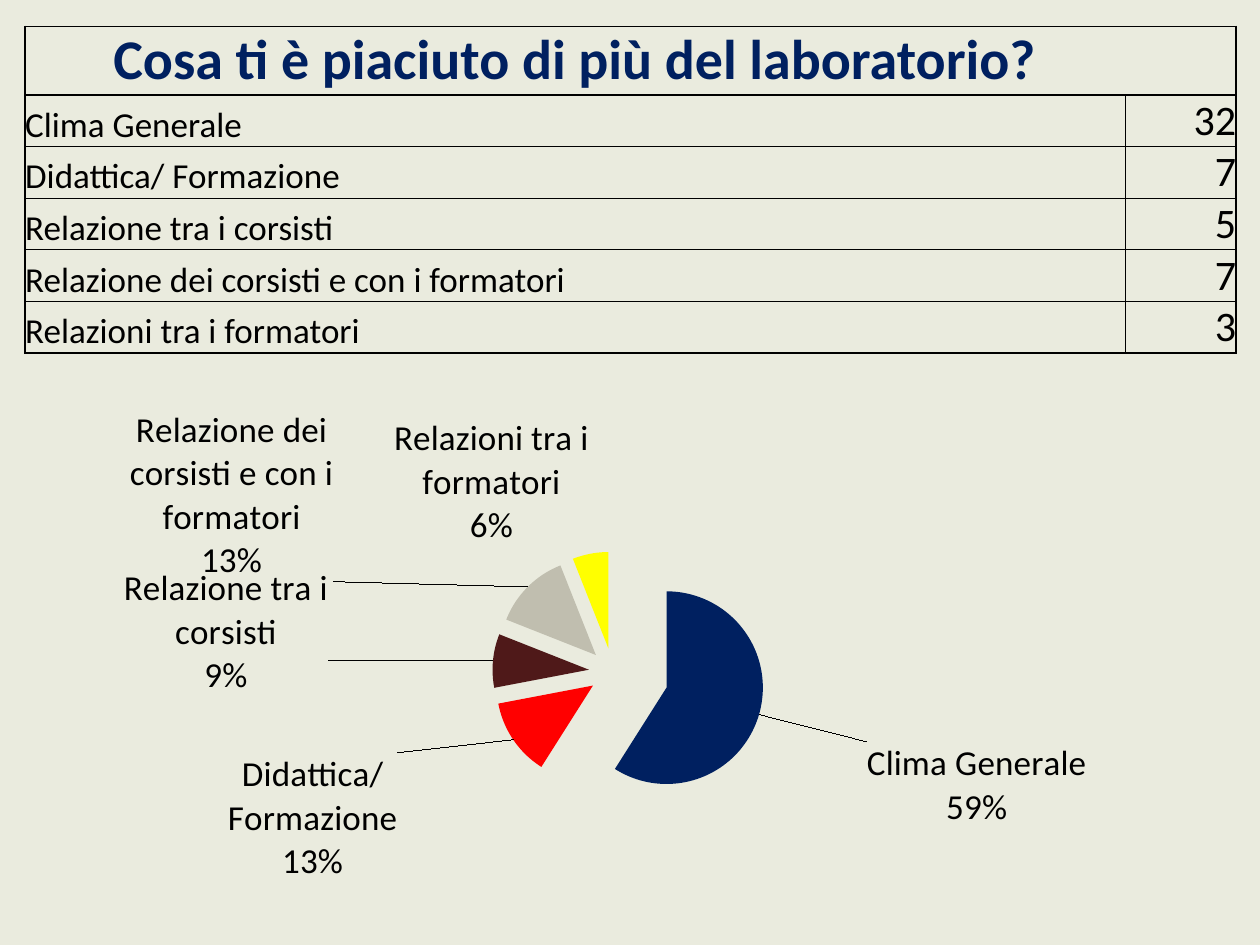
from pptx import Presentation
from pptx.chart.data import CategoryChartData
from pptx.dml.color import RGBColor
from pptx.enum.chart import XL_CHART_TYPE
from pptx.enum.text import MSO_ANCHOR, PP_ALIGN
from pptx.oxml import parse_xml
from pptx.oxml.ns import nsdecls
from pptx.util import Inches, Pt

CREAM = RGBColor(0xEA, 0xEB, 0xDE)
BLACK = RGBColor(0, 0, 0)
NAVY = RGBColor(0x00, 0x20, 0x60)
RED = RGBColor(0xFF, 0, 0)
MAROON = RGBColor(0x4F, 0x19, 0x19)
STONE = RGBColor(0xC0, 0xBE, 0xAF)
YELLOW = RGBColor(0xFF, 0xFF, 0)

WIDE, HIGH = 9.61, 4.27  # chart size in inches
PIE = 1.53  # pie diameter in inches
TITLE = "Cosa ti è piaciuto di più del laboratorio?"
# answer, votes, percent, slice colour, label shift in inches
ANSWERS = [
    ("Clima Generale", 32, 59, NAVY, (0.8, 0.2)),
    ("Didattica/ Formazione", 7, 13, RED, (-0.87, 0.07)),
    ("Relazione tra i corsisti", 5, 9, MAROON, (-1.25, 0.29)),
    ("Relazione dei corsisti e con i formatori", 7, 13, STONE, (-1.5, 0)),
    ("Relazioni tra i formatori", 3, 6, YELLOW, None),
]


def set_edges(cell, widths):
    """Draw cell borders; widths in points for left, right, top, bottom, 0 for none."""
    props = cell._tc.get_or_add_tcPr()
    for i, (side, width) in enumerate(zip("LRTB", widths)):
        paint = '<a:solidFill><a:srgbClr val="000000"/></a:solidFill>' if width else "<a:noFill/>"
        props.insert(i, parse_xml(
            f'<a:ln{side} {nsdecls("a")} w="{Pt(width)}">{paint}</a:ln{side}>'))


def layout(x, y, head="", tail=""):
    """Give layout XML for a place in inches within the chart."""
    return (f'<c:layout {nsdecls("c")}><c:manualLayout>{head}<c:x val="{x / WIDE}"/>'
            f'<c:y val="{y / HIGH}"/>{tail}</c:manualLayout></c:layout>')


prs = Presentation()
prs.slide_width, prs.slide_height = Inches(10), Inches(7.5)
slide = prs.slides.add_slide(prs.slide_layouts[6])
slide.background.fill.solid()
slide.background.fill.fore_color.rgb = CREAM

# Pie chart
data = CategoryChartData()
data.categories = [answer[0] for answer in ANSWERS]
data.add_series("Series 1", [answer[2] for answer in ANSWERS])
chart = slide.shapes.add_chart(XL_CHART_TYPE.PIE, Inches(0.2), Inches(2.96),
                               Inches(WIDE), Inches(HIGH), data).chart
chart.has_legend = chart.has_title = False
chart.font.name, chart.font.size = "Calibri", Pt(20)
chart.font.color.rgb = BLACK

area = chart._chartSpace.chart.plotArea
for old in area.findall("{*}layout"):
    area.remove(old)
area.insert(0, parse_xml(layout(
    3.9, 1.61,
    '<c:layoutTarget val="inner"/><c:xMode val="edge"/><c:yMode val="edge"/>',
    f'<c:w val="{PIE / WIDE}"/><c:h val="{PIE / HIGH}"/>')))

plot = chart.plots[0]
plot.vary_by_categories = True
series = plot.series[0]
SHOW = ('<c:numFmt formatCode="0%" sourceLinked="0"/><c:dLblPos val="bestFit"/>'
        '<c:showLegendKey val="0"/><c:showVal val="0"/><c:showCatName val="1"/>'
        '<c:showSerName val="0"/><c:showPercent val="1"/><c:showBubbleSize val="0"/>')
labels = ""
for i, (name, votes, share, color, shift) in enumerate(ANSWERS):
    fill = series.points[i].format.fill
    fill.solid()
    fill.fore_color.rgb = color
    if shift:
        labels += f'<c:dLbl><c:idx val="{i}"/>{layout(*shift)}{SHOW}</c:dLbl>'
for i, point in enumerate(series._element.findall("{*}dPt")):
    point.find("{*}spPr").addprevious(parse_xml(
        f'<c:explosion {nsdecls("c")} val="{25 if i else 58}"/>'))
series._element.find("{*}cat").addprevious(parse_xml(
    f'<c:dLbls {nsdecls("c")}>{labels}{SHOW}<c:showLeaderLines val="1"/></c:dLbls>'))

# Table of votes, closed by a thin empty row
rows = [(TITLE, "")] + [(a[0], str(a[1])) for a in ANSWERS] + [("", "")]
last = len(ANSWERS)
table = slide.shapes.add_table(len(rows), 2, Inches(0.2), Inches(0.21),
                               Inches(9.61), Inches(2.79)).table
table.first_row = table.horz_banding = False
table.columns[0].width, table.columns[1].width = Inches(8.73), Inches(0.88)
for r, row in enumerate(rows):
    head, empty = r == 0, r > last
    table.rows[r].height = Inches(0.53 if head else 0.21 if empty else 0.41)
    for c, text in enumerate(row):
        cell = table.cell(r, c)
        cell.text = text
        cell.vertical_anchor = MSO_ANCHOR.BOTTOM
        cell.margin_left = cell.margin_right = cell.margin_top = cell.margin_bottom = 0
        cell.fill.background()
        para = cell.text_frame.paragraphs[0]
        para.alignment = PP_ALIGN.CENTER if head else PP_ALIGN.RIGHT if c else PP_ALIGN.LEFT
        font = para.font
        font.name, font.bold = "Calibri", head
        font.size = Pt(10 if empty else 32 if head else 24 if c else 20)
        font.color.rgb = NAVY if head else BLACK
        inner = 0 if head else 0.5
        top = 1 if r < 2 or empty else 0.5
        bottom = 1 if head or r == last else 0.5
        if empty:
            set_edges(cell, (0, 0, top, 0))
        else:
            set_edges(cell, (inner if c else 1, 1 if c else inner, top, bottom))

prs.save("out.pptx")
